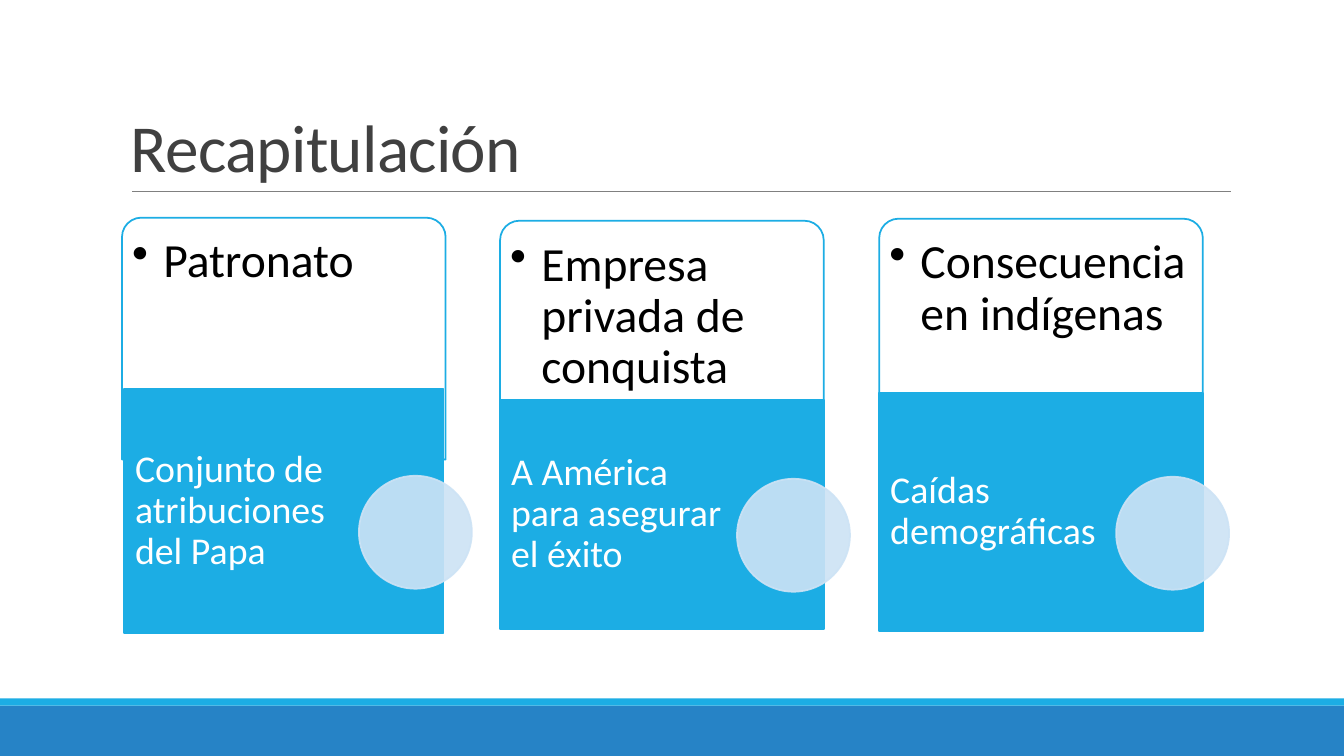
from lxml import etree
from pptx import Presentation
from pptx import util as u
from pptx.dml.color import RGBColor
from pptx.enum import shapes, text
from pptx.oxml.ns import qn

BLUE, DARK_BLUE, PALE_BLUE = "1CADE4", "2683C6", "CDE3F5"
WHITE, BLACK, GRAY, RULE_GRAY = "FFFFFF", "000000", "404040", "808080"


def color(value):
    return RGBColor.from_string(value)


def set_alpha(fill_element, percent):
    """Make the solid fill inside the element partly transparent."""
    rgb = fill_element.find(qn("a:solidFill")).find(qn("a:srgbClr"))
    etree.SubElement(rgb, qn("a:alpha")).set("val", str(percent * 1000))


def write(box, words, size, ink, font="Calibri", spacing=0.9, anchor="TOP",
          insets=(0.1, 0.05, 0.1, 0.05), bullet_indent=None, tracking=None):
    """Fill a text box with one formatted paragraph."""
    frame = box.text_frame
    frame.word_wrap = True
    frame.vertical_anchor = getattr(text.MSO_ANCHOR, anchor)
    (frame.margin_left, frame.margin_top,
     frame.margin_right, frame.margin_bottom) = map(u.Inches, insets)
    para = frame.paragraphs[0]
    para.line_spacing = spacing
    if bullet_indent:
        props = para._p.get_or_add_pPr()
        props.set("marL", str(u.Inches(bullet_indent)))
        props.set("indent", str(-u.Inches(bullet_indent)))
        etree.SubElement(props, qn("a:buChar")).set("char", "•")
    span = para.add_run()
    span.text = words
    span.font.name = font
    span.font.size = u.Pt(size)
    span.font.color.rgb = color(ink)
    if tracking:
        span._r.get_or_add_rPr().set("spc", str(round(tracking * 100)))


class SlideBuilder:
    def __init__(self, page, line_width=1.25):
        self.page = page
        self.line_width = line_width

    def shape(self, kind, place, fill, line=None, opacity=None,
              line_opacity=None, adjust=()):
        item = self.page.shapes.add_shape(
            getattr(shapes.MSO_SHAPE, kind), *map(u.Inches, place))
        item.shadow.inherit = False
        for index, value in enumerate(adjust):
            item.adjustments[index] = value
        item.fill.solid()
        item.fill.fore_color.rgb = color(fill)
        if opacity:
            set_alpha(item._element.spPr, opacity)
        if line:
            item.line.color.rgb = color(line)
            item.line.width = u.Pt(self.line_width)
            if line_opacity:
                set_alpha(item._element.spPr.find(qn("a:ln")), line_opacity)
        else:
            item.line.fill.background()
        return item

    def text(self, place, words, **style):
        box = self.page.shapes.add_textbox(*map(u.Inches, place))
        write(box, words, **style)

    def rule(self, start, end, ink, width):
        line = self.page.shapes.add_connector(
            shapes.MSO_CONNECTOR.STRAIGHT, *map(u.Inches, start + end))
        line.line.color.rgb = color(ink)
        line.line.width = u.Pt(width)
        etree.SubElement(line._element.spPr, qn("a:effectLst"))

    def card(self, left, top, heading, detail, panel):
        # White card with a bulleted heading
        self.shape("ROUND_2_SAME_RECTANGLE", (left, top, 3.21, 2.4), WHITE,
                   line=BLUE, opacity=90, adjust=(0.08, 0))
        self.text((left + 0.05, top + 0.05, 3.1, 2.34), heading, size=34,
                  ink=BLACK, insets=(0.05, 0.14, 0.05, 0.05),
                  bullet_indent=0.31)
        # Blue panel with the detail
        panel_left, panel_top, panel_width, panel_height = panel
        self.shape("RECTANGLE", panel, BLUE, line=BLUE)
        self.text((panel_left, panel_top, panel_width - 0.95, panel_height),
                  detail, size=27, ink=WHITE, anchor="MIDDLE",
                  insets=(0.11, 0, 0.04, 0))
        # Circle over the panel's right edge
        self.shape("OVAL", (left + 2.35, top + 2.56, 1.12, 1.12), PALE_BLUE,
                   line=PALE_BLUE, opacity=90, line_opacity=90)


def main():
    deck = Presentation()
    deck.slide_width, deck.slide_height = u.Inches(13.33), u.Inches(7.5)
    builder = SlideBuilder(deck.slides.add_slide(deck.slide_layouts[6]))

    # Footer bands
    builder.shape("RECTANGLE", (0, 7, 13.33, 0.5), DARK_BLUE)
    builder.shape("RECTANGLE", (0, 6.93, 13.33, 0.07), BLUE)

    # Title and its rule
    builder.rule((1.31, 1.9), (12.21, 1.9), RULE_GRAY, 0.5)
    builder.text((1.2, 0.31, 11, 1.59), "Recapitulación", size=48, ink=GRAY,
                 spacing=0.85, anchor="BOTTOM", tracking=-0.5)

    # Cards: left, top, heading, detail, panel place
    cards = [
        (1.21, 2.16, "Patronato", "Conjunto de atribuciones del Papa",
         (1.23, 3.86, 3.17, 2.42)),
        (4.96, 2.19, "Empresa privada de conquista",
         "A América para asegurar el éxito", (4.96, 3.97, 3.21, 2.27)),
        (8.72, 2.17, "Consecuencia en indígenas", "Caídas demográficas",
         (8.72, 3.9, 3.21, 2.36)),
    ]
    for card in cards:
        builder.card(*card)

    deck.save("out.pptx")


if __name__ == "__main__":
    main()
